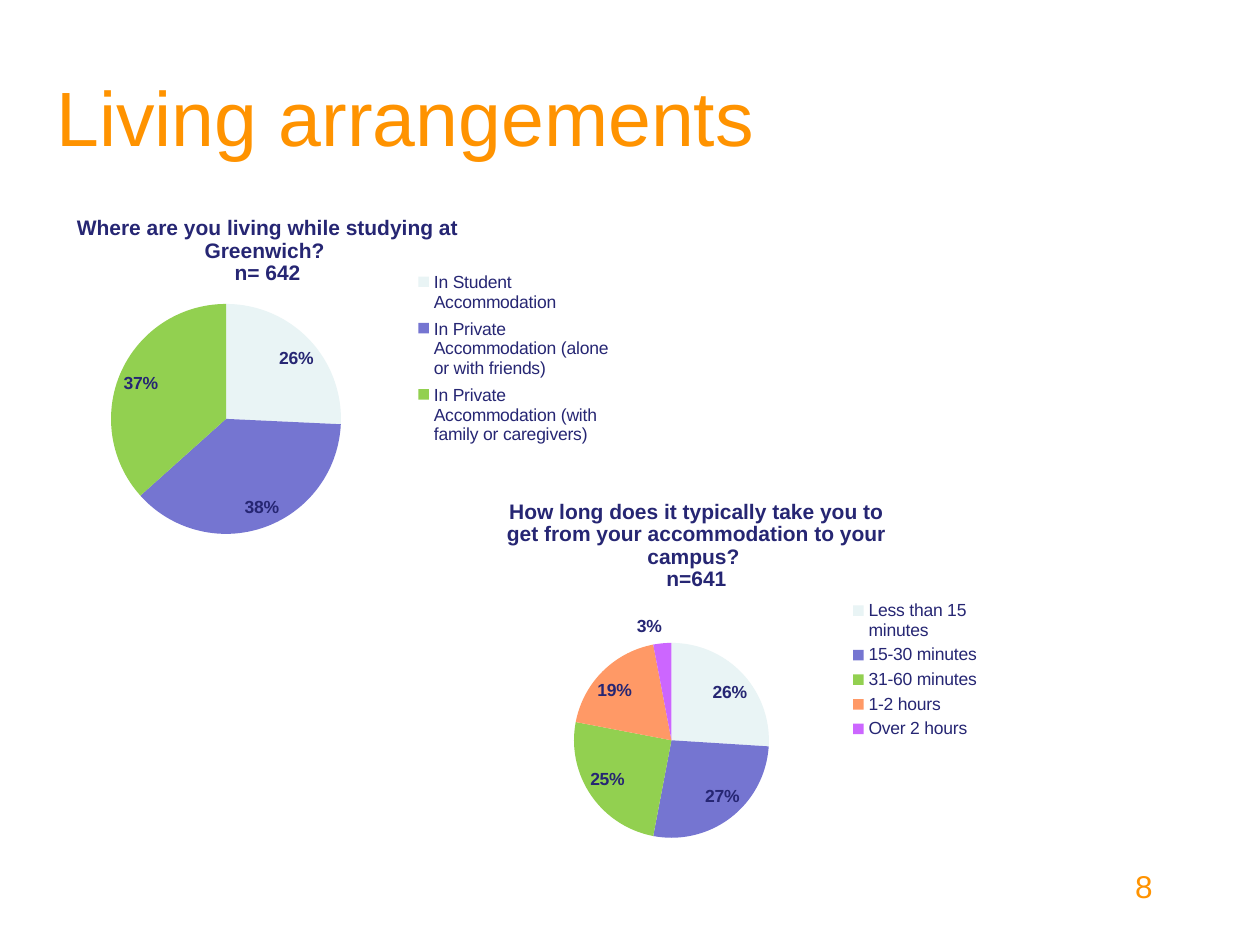
from dataclasses import dataclass

from lxml import etree
from pptx import Presentation
from pptx import util as u
from pptx.chart import data as chart_data
from pptx.dml import color
from pptx.enum import chart as chart_enum
from pptx.enum import text
from pptx.oxml import ns

PX = u.Inches(1) // 126


@dataclass(frozen=True)
class Theme:
    font: str = "Arial"
    accent: str = "FF9300"
    ink: str = "262673"
    slices: tuple = ("E9F4F5", "7575D1", "92D050", "FF9966", "CC66FF")
    heading: int = 44
    number: int = 18
    chart_title: int = 12
    chart_text: int = 10


class SlideBuilder:
    def __init__(self, presentation, theme):
        self.theme = theme
        self.slide = presentation.slides.add_slide(presentation.slide_layouts[6])

    def style(self, font, size, colour, bold=False):
        font.name = self.theme.font
        font.size = u.Pt(size)
        font.bold = bold
        font.color.rgb = color.RGBColor.from_string(colour)

    def add_run(self, paragraph, words, size, colour, bold=False):
        run = paragraph.add_run()
        run.text = words
        self.style(run.font, size, colour, bold)

    def label(self, box, words, size, anchor=text.MSO_ANCHOR.TOP, align=text.PP_ALIGN.LEFT):
        shape = self.slide.shapes.add_textbox(*(value * PX for value in box))
        frame = shape.text_frame
        frame.word_wrap = True
        frame.vertical_anchor = anchor
        paragraph = frame.paragraphs[0]
        paragraph.alignment = align
        self.add_run(paragraph, words, size, self.theme.accent)

    def place(self, element, index, frame, box, inner=False):
        for old in element.findall(ns.qn("c:layout")):
            element.remove(old)
        layout = etree.Element(ns.qn("c:layout"))
        manual = etree.SubElement(layout, ns.qn("c:manualLayout"))
        left, top, width, height = frame
        settings = [("layoutTarget", "inner")] if inner else []
        settings += [("xMode", "edge"), ("yMode", "edge")]
        settings += [("x", (box[0] - left) / width), ("y", (box[1] - top) / height)]
        if len(box) == 4:
            settings += [("w", box[2] / width), ("h", box[3] / height)]
        for name, value in settings:
            etree.SubElement(manual, ns.qn(f"c:{name}")).set("val", str(value))
        element.insert(index, layout)

    def pie(self, frame, title, title_at, pie_box, legend_box, answers):
        theme = self.theme
        data = chart_data.CategoryChartData()
        data.categories = list(answers)
        data.add_series("Series 1", list(answers.values()))
        chart = self.slide.shapes.add_chart(
            chart_enum.XL_CHART_TYPE.PIE, *(value * PX for value in frame), data
        ).chart
        self.style(chart.font, theme.chart_text, theme.ink)

        chart.has_title = True
        title_frame = chart.chart_title.text_frame
        for index, words in enumerate(title):
            paragraph = title_frame.add_paragraph() if index else title_frame.paragraphs[0]
            self.add_run(paragraph, words, theme.chart_title, theme.ink, True)
        chart.chart_title.include_in_layout = False

        chart.has_legend = True
        legend = chart.legend
        legend.position = chart_enum.XL_LEGEND_POSITION.RIGHT
        legend.include_in_layout = False
        self.style(legend.font, theme.chart_text, theme.ink)

        plot = chart.plots[0]
        plot.vary_by_categories = True
        for index in range(len(answers)):
            point = plot.series[0].points[index]
            point.format.fill.solid()
            point.format.fill.fore_color.rgb = color.RGBColor.from_string(theme.slices[index])
            point.format.line.fill.background()
        labels = plot.series[0].data_labels
        labels.show_percentage = True
        labels.show_value = False
        labels.number_format = "0%"
        labels.number_format_is_linked = False
        labels.position = chart_enum.XL_LABEL_POSITION.BEST_FIT
        self.style(labels.font, theme.chart_text, theme.ink, True)

        plot_area = chart.element.find(f".//{ns.qn('c:plotArea')}")
        title_element = chart.element.find(f".//{ns.qn('c:title')}")
        legend_element = chart.element.find(f".//{ns.qn('c:legend')}")
        self.place(plot_area, 0, frame, pie_box, inner=True)
        self.place(title_element, 1, frame, title_at)
        self.place(legend_element, 1, frame, legend_box)


def main():
    presentation = Presentation()
    presentation.slide_width = 1260 * PX
    presentation.slide_height = 945 * PX
    theme = Theme()
    builder = SlideBuilder(presentation, theme)
    builder.label((44, 37, 863, 158), "Living arrangements", theme.heading, text.MSO_ANCHOR.MIDDLE)
    builder.pie(
        frame=(35, 194, 595, 358),
        title=("Where are you living while studying at Greenwich? ", "n= 642"),
        title_at=(73, 211),
        pie_box=(111, 304, 230, 230),
        legend_box=(411, 266, 205, 186),
        answers={
            "In Student Accommodation": 26,
            "In Private Accommodation (alone or with friends)": 38,
            "In Private Accommodation (with family or caregivers)": 37,
        },
    )
    builder.pie(
        frame=(474, 483, 515, 373),
        title=(
            "How long does it typically take you to get from your accommodation to your campus? ",
            "n=641",
        ),
        title_at=(503, 495),
        pie_box=(574, 643, 195, 195),
        legend_box=(845, 596, 140, 148),
        answers={
            "Less than 15 minutes": 26,
            "15-30 minutes": 27,
            "31-60 minutes": 25,
            "1-2 hours": 19,
            "Over 2 hours": 3,
        },
    )
    builder.label((903, 861, 262, 63), "8", theme.number, align=text.PP_ALIGN.RIGHT)
    presentation.save("out.pptx")


if __name__ == "__main__":
    main()
